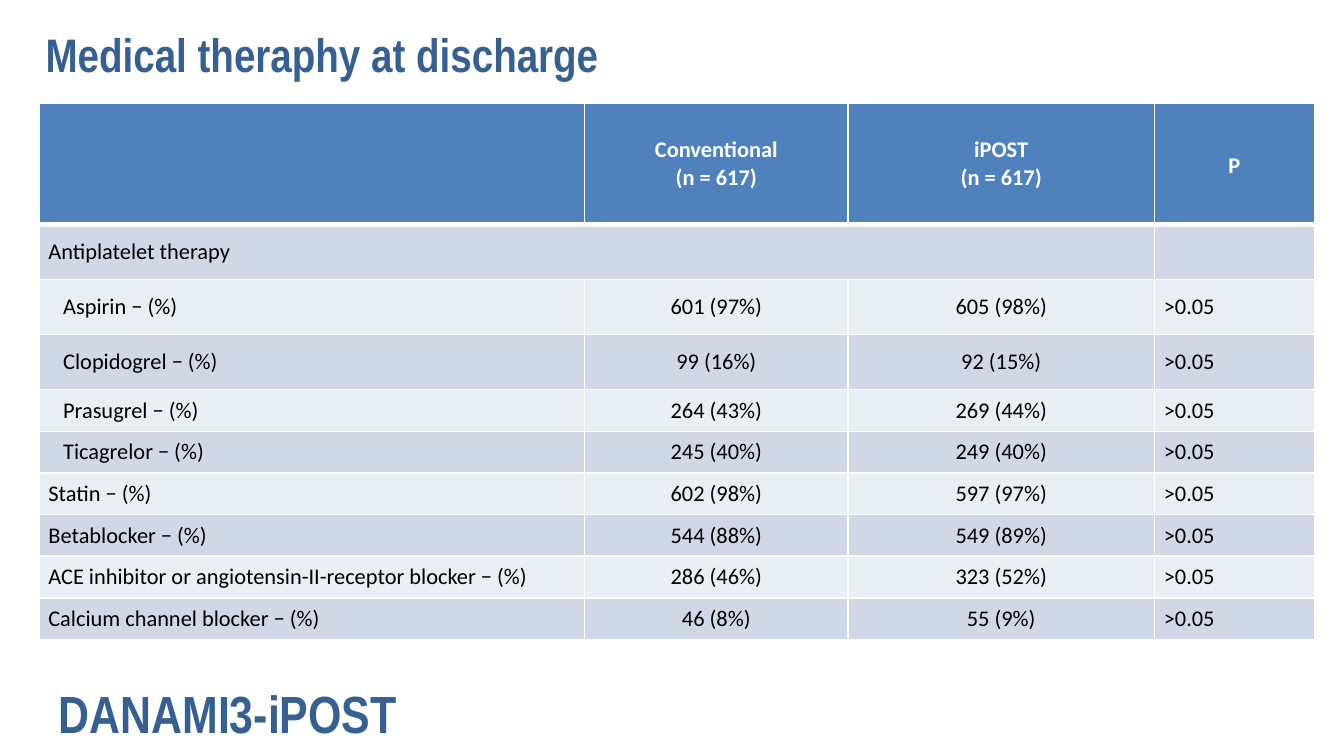
from dataclasses import dataclass

from lxml.etree import SubElement
from pptx import Presentation
from pptx.dml.color import RGBColor
from pptx.enum.text import MSO_ANCHOR as Anchor, PP_ALIGN as Align
from pptx.oxml import parse_xml
from pptx.oxml.ns import nsdecls, qn
from pptx.util import Inches, Pt


@dataclass(frozen=True)
class Theme:
    heading_font: str = "Arial Narrow"
    body_font: str = "Calibri"
    heading: str = "376092"
    header_fill: str = "4F81BD"
    bands: tuple = ("D0D8E8", "E9EDF4")
    white: str = "FFFFFF"
    black: str = "000000"
    title_size: float = 25.2
    study_size: float = 28
    table_size: float = 12
    thin: float = 1
    thick: float = 3


THEME = Theme()
SLIDE_WIDTH = Inches(10)
SLIDE_HEIGHT = SLIDE_WIDTH * 9 // 16
COLUMN_WIDTHS = (4.06, 1.96, 2.28, 1.19)
ROW_HEIGHTS = (0.9,) + (0.41,) * 3 + (0.31,) * 6
SIDE_MARGIN = 0.07
DRUG_INDENT = 0.11
P_VALUE = ">0.05"
HEADERS = ("", "Conventional\n(n = 617)", "iPOST\n(n = 617)", "P")
GROUP = "Antiplatelet therapy"
ANTIPLATELETS = ("Aspirin", "Clopidogrel", "Prasugrel", "Ticagrelor")
THERAPIES = (
    ("Aspirin", "601 (97%)", "605 (98%)"),
    ("Clopidogrel", "99 (16%)", "92 (15%)"),
    ("Prasugrel", "264 (43%)", "269 (44%)"),
    ("Ticagrelor", "245 (40%)", "249 (40%)"),
    ("Statin", "602 (98%)", "597 (97%)"),
    ("Betablocker", "544 (88%)", "549 (89%)"),
    ("ACE inhibitor or angiotensin-II-receptor blocker", "286 (46%)", "323 (52%)"),
    ("Calcium channel blocker", "46 (8%)", "55 (9%)"),
)


def apply_format(target, values):
    for name, value in values.items():
        setattr(target, name, value)


def write_text(paragraph, text, font, size, color, bold):
    paragraph.text = text
    for run in paragraph.runs:
        apply_format(run.font, {"name": font, "size": Pt(size), "bold": bold})
        run.font.color.rgb = RGBColor.from_string(color)


def add_heading(slide, text, box, size):
    shape = slide.shapes.add_textbox(*map(Inches, box))
    frame = shape.text_frame
    apply_format(frame, {"word_wrap": True, "vertical_anchor": Anchor.MIDDLE})
    write_text(frame.paragraphs[0], text, THEME.heading_font, size, THEME.heading, True)


def set_borders(cell, top, bottom):
    properties = cell._tc.get_or_add_tcPr()
    widths = {"lnL": THEME.thin, "lnR": THEME.thin, "lnT": top, "lnB": bottom}
    for position, (side, width) in enumerate(widths.items()):
        line = parse_xml(f'<a:{side} {nsdecls("a")} w="{Pt(width)}"/>')
        fill = SubElement(line, qn("a:solidFill"))
        SubElement(fill, qn("a:srgbClr"), val=THEME.white)
        properties.insert(position, line)


def format_cell(cell, text, row, column, indent):
    is_header = row == 0
    centered = is_header or column in (1, 2)
    apply_format(cell, {
        "vertical_anchor": Anchor.MIDDLE,
        "margin_left": Inches(SIDE_MARGIN + indent),
        "margin_right": Inches(SIDE_MARGIN),
        "margin_top": 0,
        "margin_bottom": 0,
    })
    paragraph = cell.text_frame.paragraphs[0]
    paragraph.alignment = Align.CENTER if centered else Align.LEFT
    if is_header and column == 3:
        paragraph.line_spacing = 1.15
    color = THEME.white if is_header else THEME.black
    write_text(paragraph, text, THEME.body_font, THEME.table_size, color, is_header)
    fill = THEME.header_fill if is_header else THEME.bands[(row - 1) % 2]
    cell.fill.solid()
    cell.fill.fore_color.rgb = RGBColor.from_string(fill)
    set_borders(
        cell,
        top=THEME.thick if row == 1 else THEME.thin,
        bottom=THEME.thick if is_header else THEME.thin,
    )


def add_therapy_table(slide):
    rows = [HEADERS, (GROUP, "", "", "")]
    rows += [(f"{name} − (%)", *counts, P_VALUE) for name, *counts in THERAPIES]
    indented = {f"{name} − (%)" for name in ANTIPLATELETS}
    box = (0.29, 0.77, sum(COLUMN_WIDTHS), sum(ROW_HEIGHTS))
    table = slide.shapes.add_table(
        len(rows), len(COLUMN_WIDTHS), *map(Inches, box)
    ).table
    for column, width in zip(table.columns, COLUMN_WIDTHS):
        column.width = Inches(width)
    for row, height in zip(table.rows, ROW_HEIGHTS):
        row.height = Inches(height)
    for row, texts in enumerate(rows):
        for column, text in enumerate(texts):
            indent = DRUG_INDENT if text in indented else 0
            format_cell(table.cell(row, column), text, row, column, indent)
    table.cell(1, 0).merge(table.cell(1, 2))


def main():
    presentation = Presentation()
    apply_format(presentation, {"slide_width": SLIDE_WIDTH, "slide_height": SLIDE_HEIGHT})
    slide = presentation.slides.add_slide(presentation.slide_layouts[6])
    add_therapy_table(slide)
    add_heading(slide, "Medical theraphy at discharge", (0.24, 0.15, 9.49, 0.5), THEME.title_size)
    add_heading(slide, "DANAMI3-iPOST", (0.34, 5.05, 3.28, 0.5), THEME.study_size)
    presentation.save("out.pptx")


if __name__ == "__main__":
    main()
